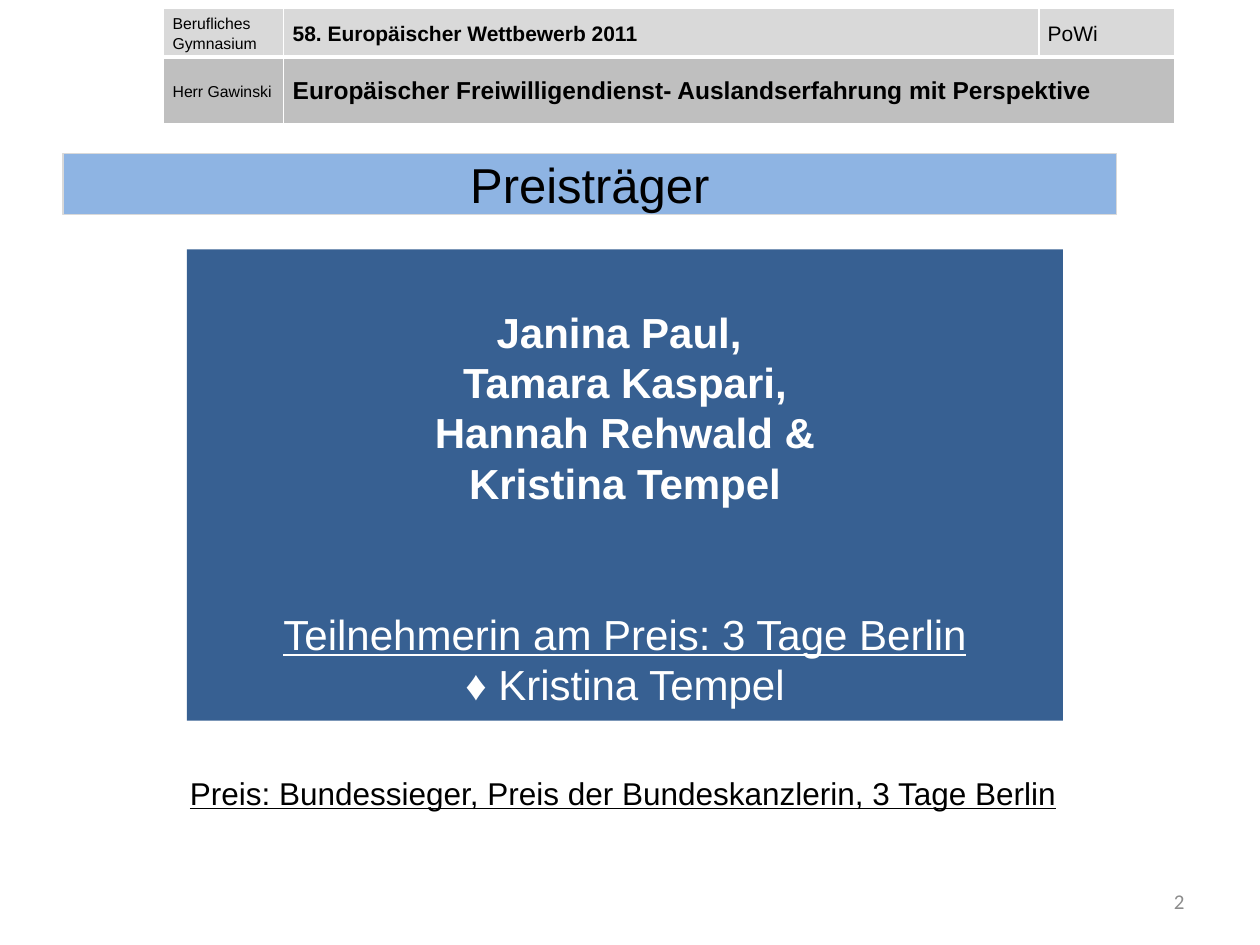
from lxml import etree
from pptx import Presentation, util as u
from pptx.dml.color import RGBColor
from pptx.enum import shapes, text
from pptx.oxml.ns import qn

HUES = {"black": "000000", "white": "FFFFFF", "light": "D9D9D9", "mid": "BFBFBF",
        "sky": "8EB4E3", "navy": "376092", "gray": "8C8C8C"}
LEFT, MID, RIGHT = text.PP_ALIGN.LEFT, text.PP_ALIGN.CENTER, text.PP_ALIGN.RIGHT


def tint(name):
    return RGBColor.from_string(HUES[name])


def span(*vals):
    return [u.Cm(v) for v in vals]


class Deck:
    font = "Arial"

    def __init__(self, slide):
        self.slide = slide

    def put(self, para, words, size, hue="black", align=LEFT, form=None, **marks):
        for key, val in {"alignment": align, **(form or {})}.items():
            setattr(para, key, val)
        run = para.add_run()
        run.text = words
        for key, val in {"name": self.font, "size": u.Pt(size), **marks}.items():
            setattr(run.font, key, val)
        run.font.color.rgb = tint(hue)

    def place(self, shape, box):
        for key, val in zip(("left", "top", "width", "height"), span(*box)):
            setattr(shape, key, val)

    def paint(self, shape, fill, line=None):
        shape.fill.solid()
        shape.fill.fore_color.rgb = tint(fill)
        if line:
            shape.line.color.rgb = tint(line)
            shape.line.width = u.Pt(0.75)
        else:
            shape.line.fill.background()

    def title(self, words, box):
        head = self.slide.shapes.title
        self.place(head, box)
        self.paint(head, "sky", "light")
        frame = head.text_frame
        frame.auto_size = text.MSO_AUTO_SIZE.NONE
        frame.vertical_anchor = text.MSO_ANCHOR.MIDDLE
        self.put(frame.paragraphs[0], words, 28, align=MID)

    def label(self, words, box, size, anchor=text.MSO_ANCHOR.TOP, **look):
        frame = self.slide.shapes.add_textbox(*span(*box)).text_frame
        frame.word_wrap = True
        frame.vertical_anchor = anchor
        self.put(frame.paragraphs[0], words, size, **look)

    def panel(self, lines, box, size, pitch):
        shape = self.slide.shapes.add_shape(shapes.MSO_SHAPE.RECTANGLE, *span(*box))
        shape.shadow.inherit = False
        self.paint(shape, "navy")
        frame = shape.text_frame
        frame.word_wrap = True
        frame.vertical_anchor = text.MSO_ANCHOR.TOP
        frame.margin_top = u.Cm(1.14)
        for num, (words, gap, marks) in enumerate(lines):
            para = frame.add_paragraph() if num else frame.paragraphs[0]
            form = {"line_spacing": u.Pt(pitch), "space_before": u.Pt(gap * pitch)}
            self.put(para, words, size, "white", MID, form, **marks)

    def edge(self, cell, sides):
        props = cell._tc.get_or_add_tcPr()
        for side, width in sides.items():
            line = etree.SubElement(props, qn(f"a:ln{side}"), w=str(u.Pt(width)))
            fill = etree.SubElement(line, qn("a:solidFill"))
            etree.SubElement(fill, qn("a:srgbClr"), val=HUES["white"])

    def table(self, rows, box, cols, highs):
        grid = self.slide.shapes.add_table(len(rows), len(cols), *span(*box)).table
        for col, wide in zip(grid.columns, span(*cols)):
            col.width = wide
        for row, high in zip(grid.rows, span(*highs)):
            row.height = high
        grid.cell(1, 1).merge(grid.cell(1, 2))
        for r, (fill, cells) in enumerate(rows):
            for c in range(len(cols)):
                cell = grid.cell(r, c)
                self.edge(cell, {"L": 1, "R": 1, "T": 3 if r else 1, "B": 1 if r else 3})
                cell.fill.solid()
                cell.fill.fore_color.rgb = tint(fill)
            for c, (words, size, bold, space) in enumerate(cells):
                cell = grid.cell(r, c)
                cell.vertical_anchor = text.MSO_ANCHOR.MIDDLE
                cell.margin_left = cell.margin_right = u.Cm(0.18)
                cell.margin_top = cell.margin_bottom = 0
                self.put(cell.text_frame.paragraphs[0], words, size,
                         form={"line_spacing": space}, bold=bold)


def main():
    show = Presentation()
    show.slide_width, show.slide_height = span(25.4, 19.05)
    deck = Deck(show.slides.add_slide(show.slide_layouts[5]))

    deck.table([
        ("light", [("Berufliches Gymnasium", 9, False, 1.15),
                   ("58. Europäischer Wettbewerb 2011", 12, True, 1.15),
                   ("PoWi", 12, False, 1.15)]),
        ("mid", [("Herr Gawinski", 9, False, 1.15),
                 ("Europäischer Freiwilligendienst- Auslandserfahrung mit Perspektive",
                  14, True, 1.0)]),
    ], (3.3, 0.17, 20.38, 2.33), (2.42, 15.22, 2.74), (0.98, 1.35))

    bold = {"bold": True}
    deck.panel([
        ("Janina Paul, ", 0, bold),
        ("Tamara Kaspari,", 0, bold),
        ("Hannah Rehwald &", 0, bold),
        ("Kristina Tempel", 0, bold),
        ("Teilnehmerin am Preis: 3 Tage Berlin", 2, {"underline": True}),
        ("♦ Kristina Tempel", 0, {}),
    ], (3.77, 5.03, 17.66, 9.5), 24, 28.8)

    deck.label("2", (18.2, 17.66, 5.93, 1.01), 12, text.MSO_ANCHOR.MIDDLE,
               hue="gray", align=RIGHT, name="Calibri")
    deck.label("Preis: Bundessieger, Preis der Bundeskanzlerin, 3 Tage Berlin",
               (3.58, 15.47, 19.05, 1.03), 18, underline=True)
    deck.title("Preisträger", (1.27, 3.1, 21.24, 1.22))
    show.save("out.pptx")


if __name__ == "__main__":
    main()
